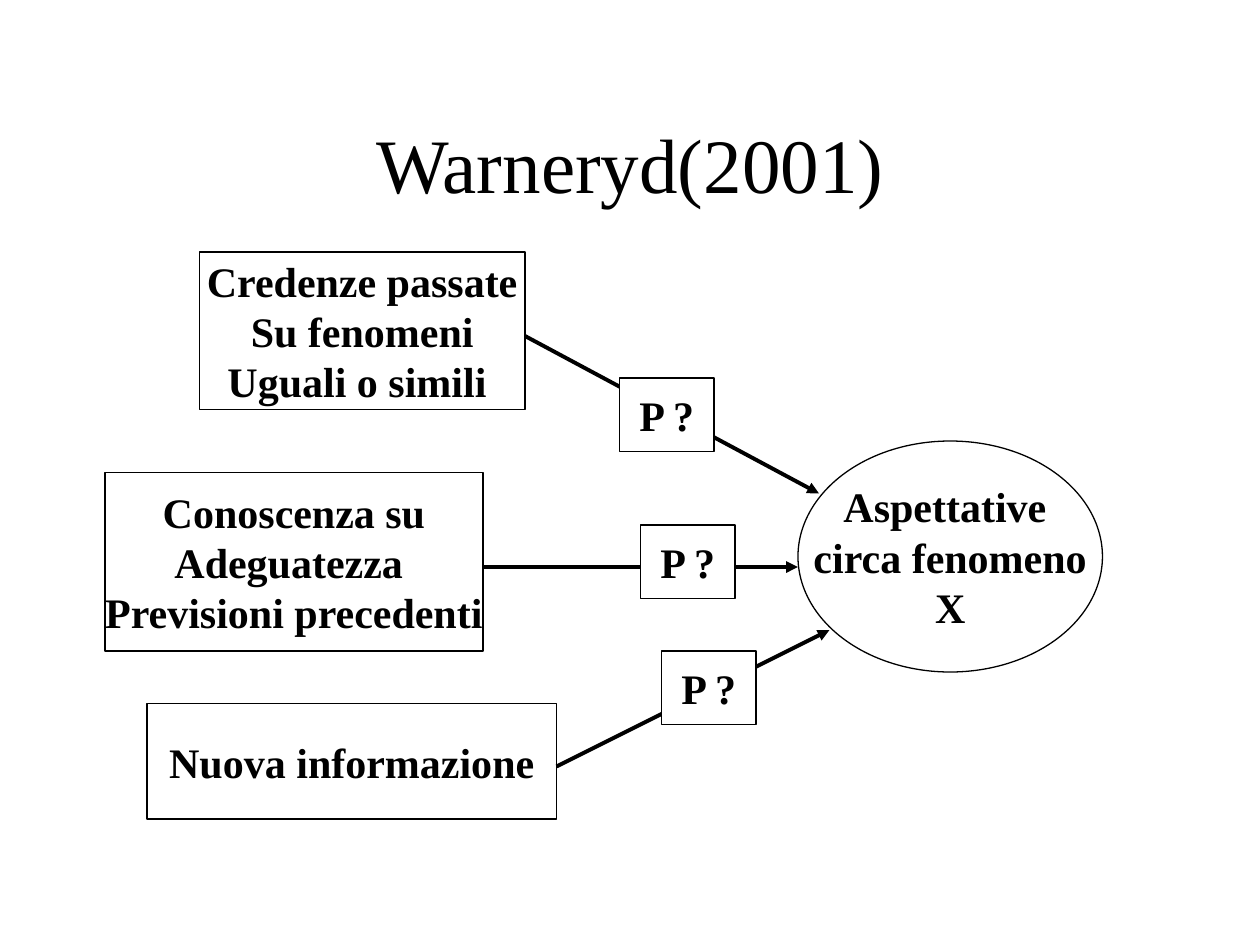
from dataclasses import dataclass

from lxml.etree import SubElement
from pptx import Presentation
from pptx.dml.color import RGBColor as Rgb
from pptx.enum.shapes import MSO_CONNECTOR as Link, MSO_SHAPE as Form
from pptx.enum.text import MSO_ANCHOR as Anchor, PP_ALIGN as Align
from pptx.oxml.ns import qn
from pptx.util import Pt

FONT = "Times New Roman"
HUES = {"ink": "000000", "paper": "FFFFFF"}


@dataclass
class Node:
    left: float
    top: float
    width: float
    height: float
    lines: tuple[str, ...]
    form: Form = Form.RECTANGLE


@dataclass
class Arrow:
    x1: float
    y1: float
    x2: float
    y2: float


GOAL = Node(456, 252, 174, 132, ("Aspettative ", "circa fenomeno", "X"), Form.OVAL)
CAUSES = [
    Node(114, 144, 186, 90, ("Credenze passate", "Su fenomeni", "Uguali o simili ")),
    Node(60, 270, 216, 102, ("Conoscenza su", "Adeguatezza ", "Previsioni precedenti")),
    Node(84, 402, 234, 66, ("Nuova informazione",)),
]
ARROWS = [
    Arrow(300, 192, 468, 282),
    Arrow(276, 324, 456, 324),
    Arrow(318, 438, 474, 360),
]
# Each probability box steps 12 pt right of the one above
ODDS = [Node(354 + 12 * i, top, 54, 42, ("P ?",)) for i, top in enumerate((216, 300, 372))]


def hue(name: str) -> Rgb:
    return Rgb.from_string(HUES[name])


def write(frame, lines: tuple[str, ...], size: float, bold: bool, wrap: bool) -> None:
    frame.word_wrap = wrap
    frame.vertical_anchor = Anchor.MIDDLE
    for i, line in enumerate(lines):
        para = frame.add_paragraph() if i else frame.paragraphs[0]
        para.alignment = Align.CENTER
        run = para.add_run()
        run.text = line
        font = run.font
        font.name, font.size, font.bold = FONT, Pt(size), bold
        font.color.rgb = hue("ink")


def draw_node(slide, node: Node) -> None:
    spot = map(Pt, (node.left, node.top, node.width, node.height))
    shape = slide.shapes.add_shape(node.form, *spot)
    shape.shadow.inherit = False
    shape.fill.solid()
    shape.fill.fore_color.rgb = hue("paper")
    shape.line.color.rgb = hue("ink")
    shape.line.width = Pt(0.75)
    write(shape.text_frame, node.lines, 24, True, False)


def draw_arrow(slide, arrow: Arrow) -> None:
    ends = map(Pt, (arrow.x1, arrow.y1, arrow.x2, arrow.y2))
    link = slide.shapes.add_connector(Link.STRAIGHT, *ends)
    link.line.color.rgb = hue("ink")
    link.line.width = Pt(2.25)
    SubElement(link.line._get_or_add_ln(), qn("a:tailEnd"), type="triangle")
    SubElement(link._element.spPr, qn("a:effectLst"))


def main() -> None:
    deck = Presentation()
    deck.slide_width, deck.slide_height = Pt(720), Pt(540)
    slide = deck.slides.add_slide(deck.slide_layouts[6])

    # Title
    title = slide.shapes.add_textbox(Pt(54), Pt(48), Pt(612), Pt(90))
    write(title.text_frame, ("Warneryd(2001)",), 44, False, True)

    # Expectation and its causes
    for node in [GOAL, *CAUSES]:
        draw_node(slide, node)

    # Arrows, with the probability boxes on top
    for arrow in ARROWS:
        draw_arrow(slide, arrow)
    for node in ODDS:
        draw_node(slide, node)

    deck.save("out.pptx")


if __name__ == "__main__":
    main()
